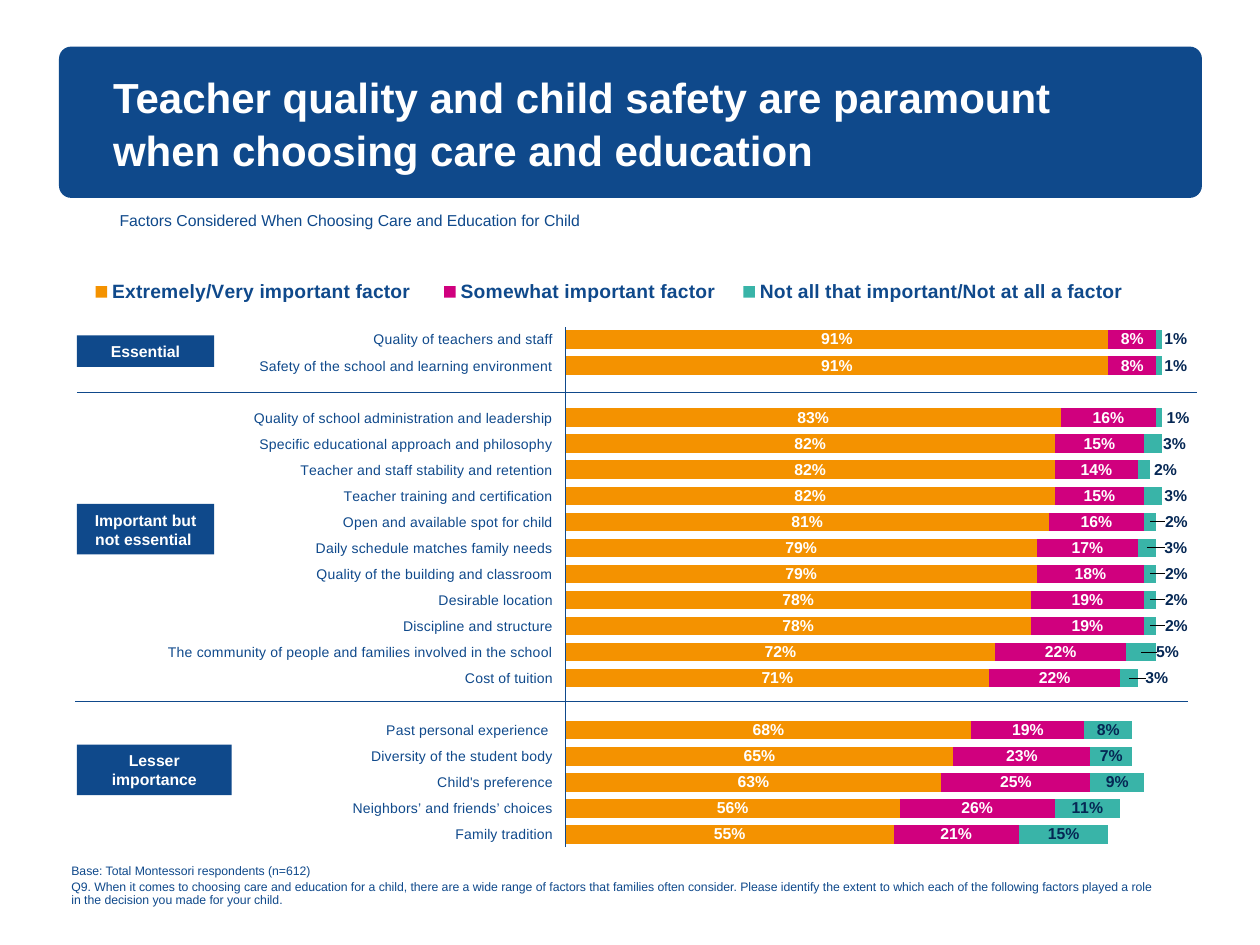
from copy import deepcopy
from lxml import etree
from pptx import Presentation
from pptx.chart.data import CategoryChartData
from pptx.dml.color import RGBColor
from pptx.enum.chart import XL_CHART_TYPE, XL_LABEL_POSITION, XL_LEGEND_POSITION, XL_TICK_LABEL_POSITION, XL_TICK_MARK
from pptx.enum.shapes import MSO_CONNECTOR, MSO_SHAPE
from pptx.enum.text import MSO_ANCHOR, PP_ALIGN
from pptx.oxml import parse_xml
from pptx.oxml.ns import nsdecls, qn
from pptx.util import Cm, Pt

BLUE = RGBColor(0x0F, 0x49, 0x8B)
NAVY = RGBColor(0x05, 0x27, 0x54)
WHITE = RGBColor(0xFF, 0xFF, 0xFF)
ORANGE = RGBColor(0xF4, 0x92, 0x00)
PINK = RGBColor(0xD0, 0x00, 0x7E)
TEAL = RGBColor(0x39, 0xB4, 0xA8)


def style(font, size, color, bold=False):
    for key, value in {"name": "Arial", "size": Pt(size), "bold": bold}.items():
        setattr(font, key, value)
    font.color.rgb = color


def layout(inner="", **values):
    parts = "".join(f'<c:{k} val="{v}"/>' for k, v in values.items())
    return parse_xml(f'<c:layout {nsdecls("c")}><c:manualLayout>{inner}{parts}</c:manualLayout></c:layout>')


prs = Presentation()
prs.slide_width, prs.slide_height = Cm(25.4), Cm(19.05)
s = prs.slides.add_slide(prs.slide_layouts[6])

title = s.shapes.add_shape(MSO_SHAPE.ROUNDED_RECTANGLE, Cm(1.19), Cm(0.94), Cm(23.04), Cm(3.05))
title.adjustments[0] = 0.08
title.shadow.inherit = False
title.fill.solid()
title.fill.fore_color.rgb = BLUE
title.line.fill.background()
tf = title.text_frame
for key, value in {"word_wrap": True, "margin_left": Cm(1.02), "margin_right": Cm(1.02)}.items():
    setattr(tf, key, value)
p = tf.paragraphs[0]
p.alignment = PP_ALIGN.LEFT
p.line_spacing = 1.05
r = p.add_run()
r.text = "Teacher quality and child safety are paramount when choosing care and education"
style(r.font, 24, WHITE, True)

tf = s.shapes.add_textbox(Cm(2.41), Cm(4.24), Cm(11.66), Cm(0.76)).text_frame
for key in ("margin_left", "margin_right", "margin_top", "margin_bottom"):
    setattr(tf, key, 0)
tf.word_wrap = True
r = tf.paragraphs[0].add_run()
r.text = "Factors Considered When Choosing Care and Education for Child"
style(r.font, 9, BLUE)

factors = [
    ("Quality of teachers and staff", 0.91, 0.08, 0.01),
    ("Safety of the school and learning environment", 0.91, 0.08, 0.01),
    ("", None, None, None),
    ("Quality of school administration and leadership", 0.83, 0.16, 0.01),
    ("Specific educational approach and philosophy", 0.82, 0.15, 0.03),
    ("Teacher and staff stability and retention", 0.82, 0.14, 0.02),
    ("Teacher training and certification", 0.82, 0.15, 0.03),
    ("Open and available spot for child", 0.81, 0.16, 0.02),
    ("Daily schedule matches family needs", 0.79, 0.17, 0.03),
    ("Quality of the building and classroom", 0.79, 0.18, 0.02),
    ("Desirable location", 0.78, 0.19, 0.02),
    ("Discipline and structure", 0.78, 0.19, 0.02),
    ("The community of people and families involved in the school", 0.72, 0.22, 0.05),
    ("Cost of tuition", 0.71, 0.22, 0.03),
    ("", None, None, None),
    ("Past personal experience ", 0.68, 0.19, 0.08),
    ("Diversity of the student body", 0.65, 0.23, 0.07),
    ("Child's preference", 0.63, 0.25, 0.09),
    ("Neighbors’ and friends’ choices", 0.56, 0.26, 0.11),
    ("Family tradition", 0.55, 0.21, 0.15),
]
ratings = [
    ("Extremely/Very important factor ", ORANGE, WHITE),
    ("Somewhat important factor", PINK, WHITE),
    ("Not all that important/Not at all a factor ", TEAL, NAVY),
]
data = CategoryChartData(number_format="0%")
data.categories = [f[0] for f in factors]
for i, rating in enumerate(ratings, 1):
    data.add_series(rating[0], [f[i] for f in factors])
chart = s.shapes.add_chart(XL_CHART_TYPE.BAR_STACKED, Cm(0.05), Cm(5.38), Cm(24.1), Cm(12.57), data).chart
chart.has_title = False
style(chart.font, 9, NAVY)

plot = chart.plots[0]
for key, value in {"gap_width": 39, "overlap": 100, "vary_by_categories": False}.items():
    setattr(plot, key, value)
for series, (name, color, label_color) in zip(plot.series, ratings):
    series.format.fill.solid()
    series.format.fill.fore_color.rgb = color
    labels = series.data_labels
    for key, value in {"show_value": True, "number_format": "0%", "number_format_is_linked": False,
                       "position": XL_LABEL_POSITION.CENTER}.items():
        setattr(labels, key, value)
    style(labels.font, 9, label_color, True)

shifts = {0: 1.4, 1: 1.4, 3: 1.6, 4: 1.8, 5: 1.8, 6: 1.9, 7: 2.2, 8: 2.4,
          9: 2.2, 10: 2.2, 11: 2.2, 12: 2.2, 13: 2.3}
number_format = labels._element.find(qn("c:numFmt"))
for i, shift in shifts.items():
    label = series.points[i].data_label
    style(label.font, 9, NAVY, True)
    label.position = XL_LABEL_POSITION.CENTER
    idx = labels._element.xpath(f'c:dLbl/c:idx[@val="{i}"]')[0]
    idx.addnext(deepcopy(number_format))
    idx.addnext(layout(x=round(shift / 100, 3), y=0))

axis = chart.category_axis
for key, value in {"reverse_order": True, "major_tick_mark": XL_TICK_MARK.NONE,
                   "minor_tick_mark": XL_TICK_MARK.NONE, "has_major_gridlines": False,
                   "tick_label_position": XL_TICK_LABEL_POSITION.LOW}.items():
    setattr(axis, key, value)
style(axis.tick_labels.font, 8, BLUE)
axis.format.line.color.rgb = BLUE
axis.format.line.width = Pt(0.75)
for key, value in {"minimum_scale": 0, "maximum_scale": 1, "has_major_gridlines": False,
                   "visible": False}.items():
    setattr(chart.value_axis, key, value)

chart.has_legend = True
legend = chart.legend
legend.position = XL_LEGEND_POSITION.TOP
legend.include_in_layout = False
style(legend.font, 11, BLUE, True)
edges = '<c:xMode val="edge"/><c:yMode val="edge"/>'
for old in legend._element.findall(qn("c:layout")):
    legend._element.remove(old)
legend._element.find(qn("c:legendPos")).addnext(layout(edges, x=0.06, y=0.01, w=0.9, h=0.06))
area = chart._chartSpace.chart.plotArea
for old in area.findall(qn("c:layout")):
    area.remove(old)
area.insert(0, layout('<c:layoutTarget val="inner"/>' + edges, x=0.471, y=0.096, w=0.499, h=0.835))

for x1, x2, y in [(1.55, 24.13, 7.92), (1.52, 23.95, 14.15)]:
    line = s.shapes.add_connector(MSO_CONNECTOR.STRAIGHT, Cm(x1), Cm(y), Cm(x2), Cm(y))
    line.line.color.rgb = BLUE
    line.line.width = Pt(0.5)
    etree.SubElement(line._element.spPr, qn("a:effectLst"))

for text, y, w, h in [("Essential", 6.76, 2.77, 0.64),
                      ("Lesser importance", 15.01, 3.12, 1.02),
                      ("Important but not essential ", 10.16, 2.77, 1.02)]:
    tag = s.shapes.add_shape(MSO_SHAPE.RECTANGLE, Cm(1.55), Cm(y), Cm(w), Cm(h))
    tag.shadow.inherit = False
    tag.fill.solid()
    tag.fill.fore_color.rgb = BLUE
    tag.line.fill.background()
    tag.text_frame.word_wrap = True
    p = tag.text_frame.paragraphs[0]
    p.alignment = PP_ALIGN.CENTER
    r = p.add_run()
    r.text = text
    style(r.font, 9, WHITE, True)

tf = s.shapes.add_textbox(Cm(1.19), Cm(17.32), Cm(22.48), Cm(1.09)).text_frame
tf.word_wrap = True
tf.vertical_anchor = MSO_ANCHOR.BOTTOM
notes = [
    "Base: Total Montessori respondents (n=612)",
    "Q9. When it comes to choosing care and education for a child, there are a wide range of factors that "
    "families often consider. Please identify the extent to which each of the following factors played a role "
    "in the decision you made for your child.",
]
for i, text in enumerate(notes):
    p = tf.add_paragraph() if i else tf.paragraphs[0]
    p.line_spacing = 0.85
    p.space_before = Pt(2 if i else 0)
    r = p.add_run()
    r.text = text
    style(r.font, 7, BLUE)

prs.save("out.pptx")
